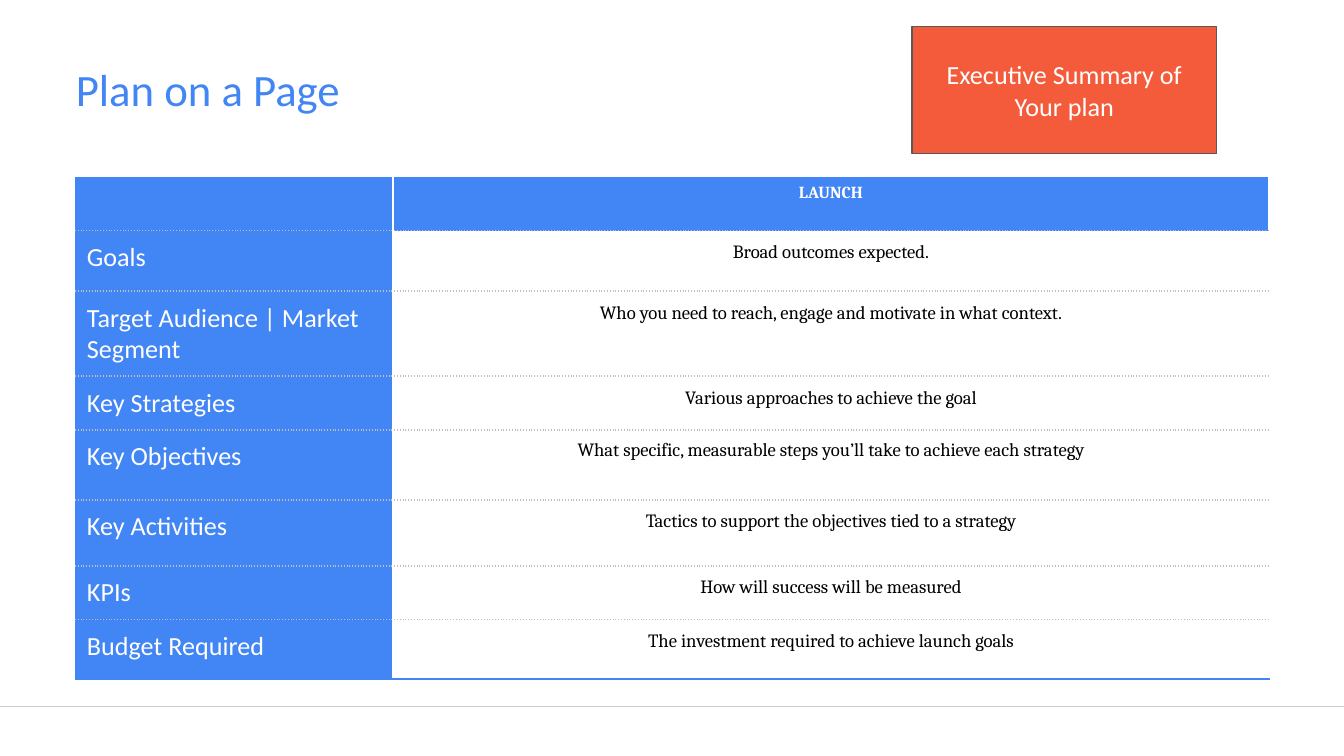
from dataclasses import dataclass

from lxml import etree
from pptx import Presentation
from pptx.dml.color import RGBColor
from pptx.enum.shapes import MSO_CONNECTOR, MSO_SHAPE
from pptx.enum.text import MSO_ANCHOR, PP_ALIGN
from pptx.oxml.ns import qn
from pptx.util import Pt

RECTANGLE = MSO_SHAPE.RECTANGLE
STRAIGHT = MSO_CONNECTOR.STRAIGHT
MIDDLE, TOP = MSO_ANCHOR.MIDDLE, MSO_ANCHOR.TOP
LEFT, CENTER = PP_ALIGN.LEFT, PP_ALIGN.CENTER
BLUE, WHITE, BLACK, ORANGE = "4285F4", "FFFFFF", "000000", "F35B3B"
DOT_GRAY, RULE_GRAY, OUTLINE_GRAY = "BFBFBF", "CCCCCC", "595959"


@dataclass
class TextStyle:
    font: str
    size: float
    color: str
    align: PP_ALIGN = LEFT
    bold: bool = False
    spacing: float = 1.0


@dataclass
class PlanRow:
    topic: str
    guidance: str
    height: float
    spacing: float = 1.0


HEADER_HEIGHT = 28.1
PLAN_ROWS = [
    PlanRow("Goals", "Broad outcomes expected.", 32.4),
    PlanRow("Target Audience | Market Segment",
            "Who you need to reach, engage and motivate in what context.", 44.7),
    PlanRow("Key Strategies", "Various approaches to achieve the goal", 28.1),
    PlanRow("Key Objectives",
            "What specific, measurable steps you’ll take to achieve each strategy", 37.5, 0.9),
    PlanRow("Key Activities", "Tactics to support the objectives tied to a strategy", 35.4),
    PlanRow("KPIs", "How will success will be measured", 28.7),
    PlanRow("Budget Required", "The investment required to achieve launch goals", 31.9),
]


def rgb(hex_color: str) -> RGBColor:
    return RGBColor.from_string(hex_color)


def write(frame, text: str, style: TextStyle) -> None:
    paragraph = frame.paragraphs[0]
    paragraph.text = text
    paragraph.alignment = style.align
    paragraph.line_spacing = style.spacing
    paragraph.font.name = style.font
    paragraph.font.size = Pt(style.size)
    paragraph.font.bold = style.bold
    paragraph.font.color.rgb = rgb(style.color)


def set_margins(frame, margin: float) -> None:
    frame.margin_left = frame.margin_right = Pt(margin)
    frame.margin_top = frame.margin_bottom = Pt(margin)


def add_border(cell, side: str, color: str, dotted: bool = False) -> None:
    properties = cell._tc.get_or_add_tcPr()
    border = etree.SubElement(properties, qn(f"a:ln{side}"), w=str(Pt(1)))
    solid = etree.SubElement(border, qn("a:solidFill"))
    etree.SubElement(solid, qn("a:srgbClr"), val=color)
    etree.SubElement(border, qn("a:prstDash"), val="sysDot" if dotted else "solid")


def fill_cell(cell, text: str, style: TextStyle, fill: str, is_first: bool,
              is_last: bool, margin: float) -> None:
    cell.margin_left = cell.margin_right = Pt(6)
    cell.margin_top = cell.margin_bottom = Pt(margin)
    cell.vertical_anchor = TOP
    write(cell.text_frame, text, style)
    add_border(cell, "L", fill if style.align == LEFT else WHITE)
    add_border(cell, "R", WHITE)
    add_border(cell, "T", BLUE if is_first else DOT_GRAY, not is_first)
    add_border(cell, "B", BLUE if is_last else DOT_GRAY, not is_last)
    cell.fill.solid()
    cell.fill.fore_color.rgb = rgb(fill)


def add_plan_table(slide) -> None:
    heights = [HEADER_HEIGHT] + [row.height for row in PLAN_ROWS]
    plan = slide.shapes.add_table(len(heights), 2, Pt(40.6), Pt(95.4),
                                  Pt(639.3), Pt(sum(heights))).table
    plan.first_row = plan.horz_banding = False
    for column, width in zip(plan.columns, (169.8, 469.5)):
        column.width = Pt(width)
    for row, height in zip(plan.rows, heights):
        row.height = Pt(height)

    topic_style = TextStyle("Calibri", 14, WHITE)
    header_style = TextStyle("Cambria", 9, WHITE, CENTER, bold=True)
    fill_cell(plan.cell(0, 0), "", topic_style, BLUE, True, False, 3)
    fill_cell(plan.cell(0, 1), "LAUNCH", header_style, BLUE, True, False, 3)
    for index, row in enumerate(PLAN_ROWS, start=1):
        is_last = index == len(PLAN_ROWS)
        guidance_style = TextStyle("Cambria", 10, BLACK, CENTER, spacing=row.spacing)
        fill_cell(plan.cell(index, 0), row.topic, topic_style, BLUE, False, is_last, 6)
        fill_cell(plan.cell(index, 1), row.guidance, guidance_style, WHITE, False, is_last, 6)


def add_footer_rule(slide) -> None:
    rule = slide.shapes.add_connector(STRAIGHT, Pt(-0.7), Pt(378.6), Pt(722), Pt(378.6))
    rule.line.color.rgb = rgb(RULE_GRAY)
    rule.line.width = Pt(0.75)
    etree.SubElement(rule._element.spPr, qn("a:effectLst"))


def add_title(slide) -> None:
    title = slide.shapes.add_textbox(Pt(40.6), Pt(36.5), Pt(639.3), Pt(27.4)).text_frame
    title.word_wrap = True
    set_margins(title, 0)
    write(title, "Plan on a Page", TextStyle("Calibri", 24, BLUE, spacing=0.9))


def add_summary_box(slide) -> None:
    summary = slide.shapes.add_shape(RECTANGLE, Pt(488.7), Pt(14.2), Pt(163), Pt(68.2))
    summary.shadow.inherit = False
    summary.fill.solid()
    summary.fill.fore_color.rgb = rgb(ORANGE)
    summary.line.color.rgb = rgb(OUTLINE_GRAY)
    summary.line.width = Pt(0.75)
    frame = summary.text_frame
    frame.word_wrap = True
    frame.vertical_anchor = MIDDLE
    set_margins(frame, 7.2)
    write(frame, "Executive Summary of Your plan", TextStyle("Calibri", 14, WHITE, CENTER))


def main() -> None:
    presentation = Presentation()
    presentation.slide_width = Pt(720)
    presentation.slide_height = Pt(405)
    slide = presentation.slides.add_slide(presentation.slide_layouts[6])
    add_footer_rule(slide)
    add_title(slide)
    add_plan_table(slide)
    add_summary_box(slide)
    presentation.save("out.pptx")


if __name__ == "__main__":
    main()
